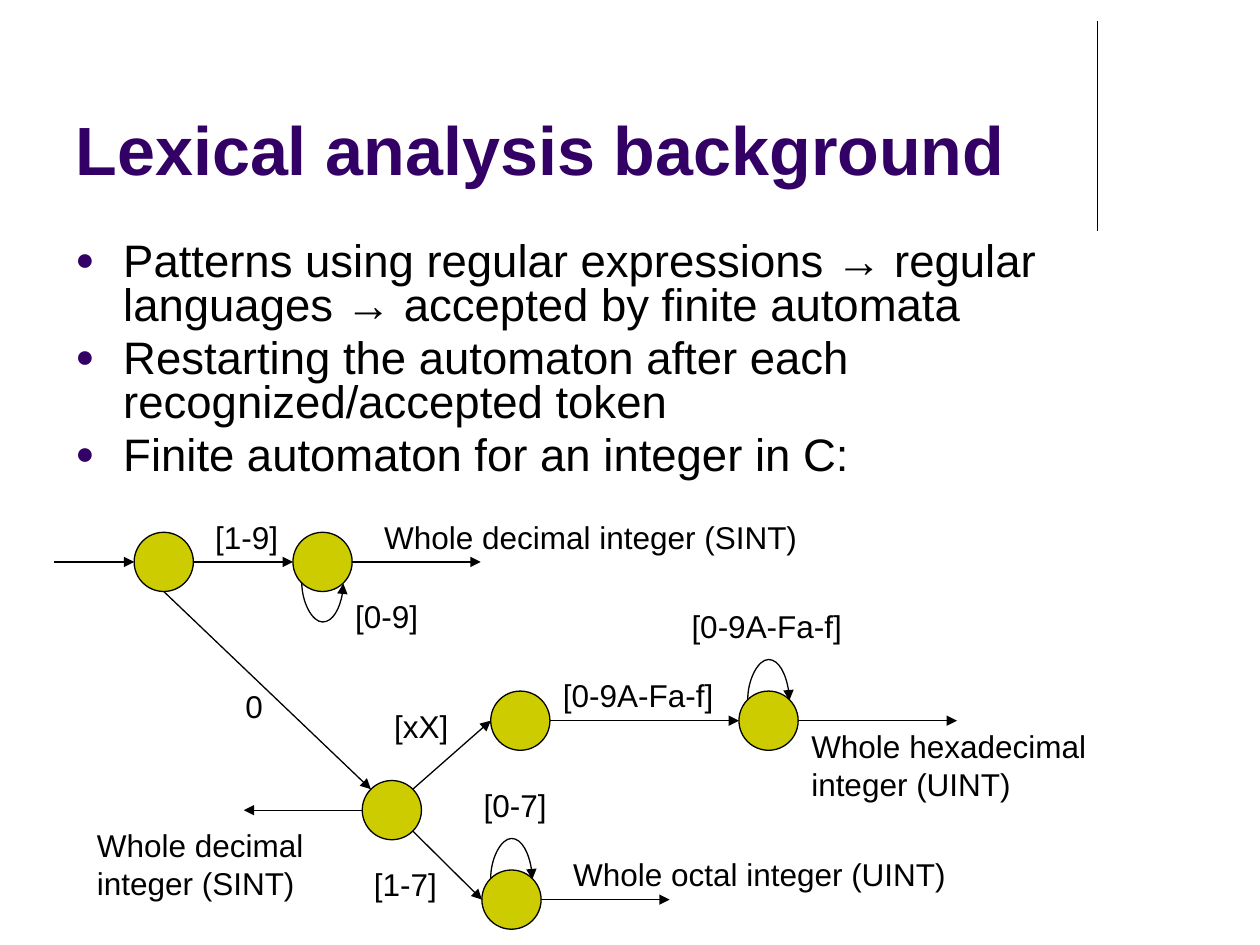
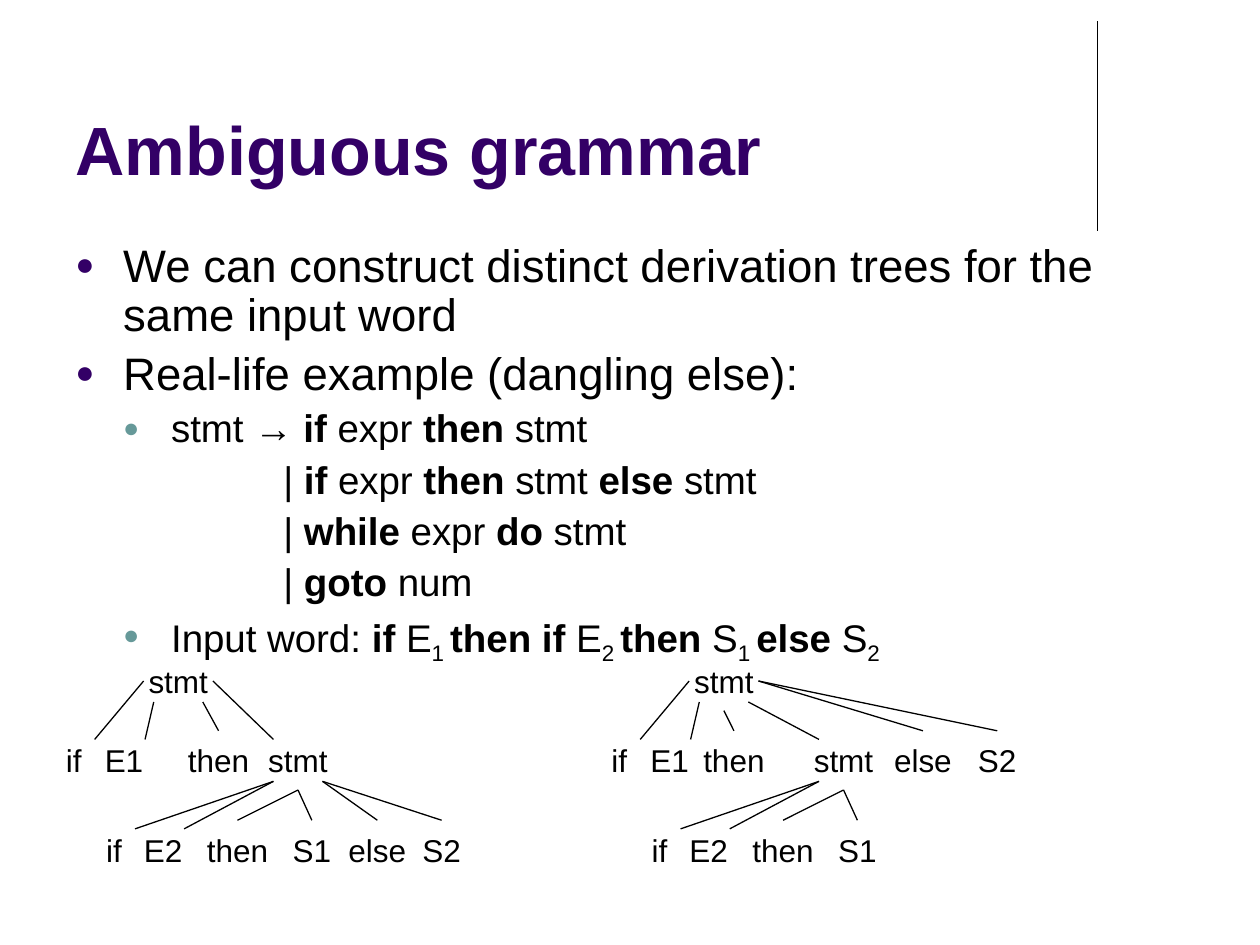
from dataclasses import dataclass

from lxml import etree
from pptx import Presentation
from pptx import util as u
from pptx.dml.color import RGBColor
from pptx.enum import shapes, text
from pptx.oxml.ns import qn


@dataclass(frozen=True)
class Theme:
    font: str = "Arial"
    title: str = "330066"
    ink: str = "000000"
    sub_bullet: str = "669999"
    state: str = "CCCC00"
    title_size: float = 39
    body_size: float = 26
    sub_size: float = 22
    label_size: float = 18
    paragraph_gap: float = 5.5
    line: float = 0.75


THEME = Theme()
NODE = 0.47
WIDE_NODE = 0.55
DIAGONAL = 0.146
SIDES = {
    "N": (0.5, 0), "NE": (1 - DIAGONAL, DIAGONAL), "E": (1, 0.5),
    "SE": (1 - DIAGONAL, 1 - DIAGONAL), "S": (0.5, 1),
    "SW": (DIAGONAL, 1 - DIAGONAL), "W": (0, 0.5), "NW": (DIAGONAL, DIAGONAL),
}


def inches(*lengths):
    return [u.Inches(length) for length in lengths]


def color(code):
    return RGBColor.from_string(code)


def set_font(font, size, code=THEME.ink, bold=False):
    font.name = THEME.font
    font.size = u.Pt(size)
    font.bold = bold
    font.color.rgb = color(code)


def style_connector(connector, arrow):
    connector.line.color.rgb = color(THEME.ink)
    connector.line.width = u.Pt(THEME.line)
    if arrow:
        etree.SubElement(connector.line._get_or_add_ln(), qn("a:tailEnd"), type="triangle")
    etree.SubElement(connector._element.spPr, qn("a:effectLst"))


def add_line(slide, start, end, arrow=False):
    connector = slide.shapes.add_connector(shapes.MSO_CONNECTOR.STRAIGHT, *start, *end)
    style_connector(connector, arrow)


def side_point(node, side):
    across, down = SIDES[side]
    return int(node.left + node.width * across), int(node.top + node.height * down)


def add_node(slide, left, top, width=NODE):
    node = slide.shapes.add_shape(shapes.MSO_SHAPE.OVAL, *inches(left, top, width, NODE))
    node.shadow.inherit = False
    return node


def add_heading(slide, heading):
    title = slide.shapes.title
    title.left, title.top, title.width, title.height = inches(0.5, 0.13, 8.25, 1.42)
    frame = title.text_frame
    frame.text = heading
    frame.auto_size = text.MSO_AUTO_SIZE.NONE
    frame.vertical_anchor = text.MSO_ANCHOR.BOTTOM
    frame.paragraphs[0].alignment = text.PP_ALIGN.LEFT
    set_font(frame.paragraphs[0].font, THEME.title_size, THEME.title, True)
    add_line(slide, inches(8.71, 0.17), inches(8.71, 1.83))


def new_slide(deck, heading):
    slide = deck.slides.add_slide(deck.slide_layouts[5])
    add_heading(slide, heading)
    return slide


def set_bullet(paragraph, margin, indent, code):
    properties = paragraph._p.get_or_add_pPr()
    properties.set("marL", str(u.Inches(margin)))
    properties.set("indent", str(u.Inches(indent)))
    if code is None:
        etree.SubElement(properties, qn("a:buNone"))
        return
    bullet_color = etree.SubElement(properties, qn("a:buClr"))
    etree.SubElement(bullet_color, qn("a:srgbClr"), val=code)
    etree.SubElement(properties, qn("a:buSzPct"), val="70000")
    etree.SubElement(properties, qn("a:buFont"), typeface=THEME.font)
    etree.SubElement(properties, qn("a:buChar"), char="●")


def add_marked_runs(paragraph, marked):
    for i, weighted in enumerate(marked.split("*")):
        for j, piece in enumerate(weighted.split("~")):
            if piece:
                run = paragraph.add_run()
                run.text = piece
                if i % 2:
                    run.font.bold = True
                if j % 2:
                    run.font._element.set("baseline", "-25000")


BULLET_STYLES = {
    "point": (0, 0.38, -0.38, THEME.title, THEME.body_size),
    "sub": (1, 0.76, -0.38, THEME.sub_bullet, THEME.sub_size),
    "alternative": (1, 1.65, 0, None, THEME.sub_size),
}


def add_bullets(slide, box, items, spacing):
    frame = slide.shapes.add_textbox(*inches(*box)).text_frame
    frame.word_wrap = True
    for i, (style, marked) in enumerate(items):
        paragraph = frame.add_paragraph() if i else frame.paragraphs[0]
        level, margin, indent, code, size = BULLET_STYLES[style]
        paragraph.level = level
        set_bullet(paragraph, margin, indent, code)
        paragraph.line_spacing = spacing
        paragraph.space_before = u.Pt(THEME.paragraph_gap if i else 0)
        set_font(paragraph.font, size)
        add_marked_runs(paragraph, marked)


def add_label(slide, words, left, top, width, height=0.4, wrap=False):
    frame = slide.shapes.add_textbox(*inches(left, top, width, height)).text_frame
    frame.word_wrap = wrap
    frame.text = words
    set_font(frame.paragraphs[0].font, THEME.label_size)


def add_loop(slide, state, below):
    thickness, span, bulge = inches(0.01, 0.33, 0.32)
    center = state.left + state.width // 2
    level = side_point(state, "SW" if below else "NW")[1]
    left, top = center - thickness // 2, level - span // 2
    right, bottom = left + thickness, top + span
    ends = (right, top, left, bottom) if below else (left, bottom, right, top)
    loop = slide.shapes.add_connector(shapes.MSO_CONNECTOR.CURVE, *ends)
    properties = loop._element.spPr
    properties.find(qn("a:xfrm")).set("rot", str((270 if below else 90) * 60000))
    geometry = properties.find(qn("a:prstGeom"))
    adjustments = geometry.find(qn("a:avLst"))
    if adjustments is None:
        adjustments = etree.SubElement(geometry, qn("a:avLst"))
    amount = bulge * 100000 // thickness * (1 if below else -1)
    etree.SubElement(adjustments, qn("a:gd"), name="adj1", fmla=f"val {amount}")
    style_connector(loop, True)


def add_automaton(slide, left, top):
    centers = {
        "start": (0.87, 0.4), "decimal": (2.13, 0.4), "zero": (2.68, 2.37),
        "prefix": (3.7, 1.66), "octal": (3.63, 3.08), "hex": (5.67, 1.66),
    }
    states = {}
    for name, (x, y) in centers.items():
        state = add_node(slide, left + x - NODE / 2, top + y - NODE / 2)
        state.fill.solid()
        state.fill.fore_color.rgb = color(THEME.state)
        state.line.color.rgb = color(THEME.ink)
        state.line.width = u.Pt(THEME.line)
        states[name] = state

    transitions = [
        ("start", "E", "decimal", "W"), ("start", "S", "zero", "NW"),
        ("zero", "NE", "prefix", "W"), ("zero", "SE", "octal", "W"),
        ("prefix", "E", "hex", "W"),
    ]
    for source, source_side, target, target_side in transitions:
        add_line(slide, side_point(states[source], source_side),
                 side_point(states[target], target_side), True)

    entry = side_point(states["start"], "W")
    add_line(slide, (u.Inches(left), entry[1]), entry, True)
    for name, side, reach in [("decimal", "E", 1.02), ("zero", "W", -0.94),
                              ("octal", "E", 1.02), ("hex", "E", 1.26)]:
        x, y = side_point(states[name], side)
        add_line(slide, (x, y), (x + u.Inches(reach), y), True)
    for name in ("decimal", "octal", "hex"):
        add_loop(slide, states[name], below=name == "decimal")

    symbols = [
        ("[1-9]", 1.18, 0, 0.7), ("0", 1.42, 1.34, 0.34), ("[0-9]", 2.29, 0.63, 0.7),
        ("[xX]", 2.6, 1.5, 0.63), ("[1-7]", 2.44, 2.76, 0.7), ("[0-7]", 3.31, 2.13, 0.7),
        ("[0-9A-Fa-f]", 3.94, 1.26, 1.4), ("[0-9A-Fa-f]", 4.96, 0.71, 1.4),
    ]
    for words, x, y, width in symbols:
        add_label(slide, words, left + x, top + y, width)
    outcomes = [
        ("Whole decimal integer (SINT)", 2.52, 0, 3.62, 0.4),
        ("Whole octal integer (UINT)", 4.02, 2.68, 3.23, 0.4),
        ("Whole hexadecimal integer (UINT)", 5.91, 1.66, 2.99, 0.71),
        ("Whole decimal integer (SINT)", 0.24, 2.45, 2.09, 0.71),
    ]
    for words, x, y, width, height in outcomes:
        add_label(slide, words, left + x, top + y, width, height, True)


def add_word(slide, word, left, top):
    node = add_node(slide, left, top, WIDE_NODE if len(word) > 2 else NODE)
    node.fill.background()
    node.line.fill.background()
    frame = node.text_frame
    frame.word_wrap = False
    frame.vertical_anchor = text.MSO_ANCHOR.MIDDLE
    frame.text = word
    frame.paragraphs[0].alignment = text.PP_ALIGN.CENTER
    set_font(frame.paragraphs[0].font, THEME.label_size)
    return node


def add_children(slide, parent, left, top, children):
    nodes = {}
    for word, x, parent_side, child_side in children:
        nodes[word] = add_word(slide, word, left + x, top)
        add_line(slide, side_point(parent, parent_side), side_point(nodes[word], child_side))
    return nodes


def add_tree(slide, left, top, outer_rest, inner_rest):
    outer = [("if", 0, "W", "NE"), ("E1", 0.4, "SW", "NE")] + outer_rest
    inner = [("if", 0.32, "SW", "NE"), ("E2", 0.71, "SW", "NE"),
             ("then", 1.26, "S", "N"), ("S1", 1.89, "S", "N")] + inner_rest
    root = add_word(slide, "stmt", left + 0.79, top)
    nodes = add_children(slide, root, left, top + 0.63, outer)
    add_children(slide, nodes["stmt"], left, top + 1.34, inner)


def build_lexical_slide(deck):
    slide = new_slide(deck, "Lexical analysis background")
    add_bullets(slide, (0.5, 1.88, 9, 2.03), [
        ("point", "Patterns using regular expressions → regular languages → "
                  "accepted by finite automata"),
        ("point", "Restarting the automaton after each recognized/accepted token"),
        ("point", "Finite automaton for an integer in C:"),
    ], 0.8)
    add_automaton(slide, 0.43, 4.06)


def build_grammar_slide(deck):
    slide = new_slide(deck, "Ambiguous grammar")
    add_bullets(slide, (0.5, 1.88, 9, 3.44), [
        ("point", "We can construct distinct derivation trees for the same input word"),
        ("point", "Real-life example (dangling else):"),
        ("sub", "stmt → *if* expr *then* stmt"),
        ("alternative", "| *if* expr *then* stmt *else* stmt"),
        ("alternative", "| *while* expr *do* stmt"),
        ("alternative", "| *goto* num"),
        ("sub", "Input word: *if* E~1 ~*then if* E~2 ~*then* S~1 ~*else* S~2~"),
    ], 0.9)
    add_tree(slide, 0.35, 5.17,
             [("then", 1.11, "SE", "N"), ("stmt", 1.74, "E", "NW")],
             [("else", 2.37, "SE", "N"), ("S2", 2.92, "SE", "N")])
    add_tree(slide, 4.68, 5.17,
             [("then", 0.87, "S", "N"), ("stmt", 1.74, "SE", "NW"),
              ("else", 2.37, "E", "N"), ("S2", 3.0, "E", "N")], [])


def main():
    deck = Presentation()
    deck.slide_width, deck.slide_height = inches(10, 7.5)
    build_lexical_slide(deck)
    build_grammar_slide(deck)
    deck.save("out.pptx")


if __name__ == "__main__":
    main()
